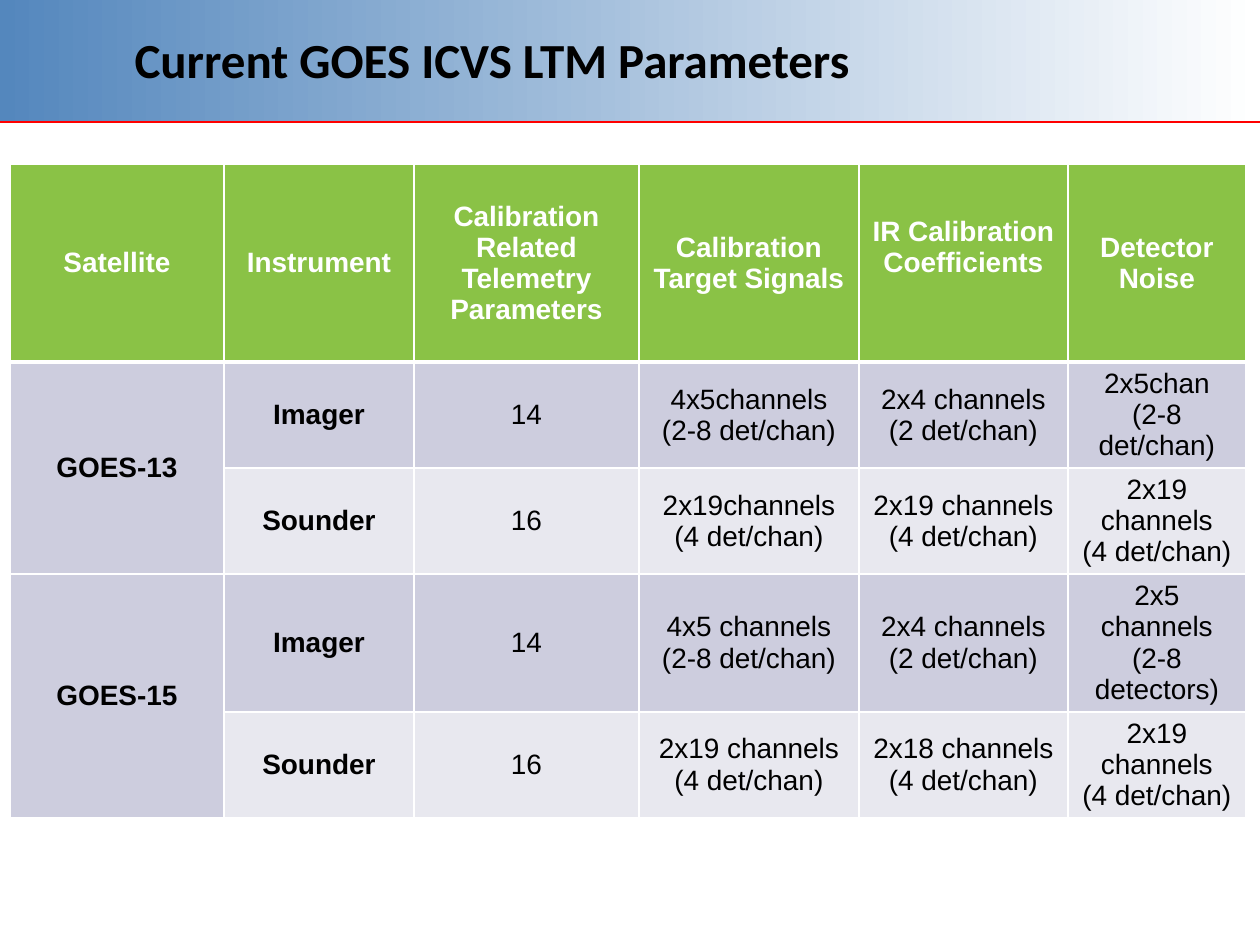
"""Build the slide of current GOES ICVS LTM parameters."""
from lxml.etree import SubElement
from pptx import Presentation
from pptx.dml.color import RGBColor as RGB
from pptx.enum.shapes import MSO_CONNECTOR as CONNECTOR, MSO_SHAPE as SHAPE
from pptx.enum.text import MSO_ANCHOR as ANCHOR, PP_ALIGN as ALIGN
from pptx.oxml import parse_xml
from pptx.oxml.ns import nsdecls, qn
from pptx.util import Emu, Pt

COLORS = {
    "blue": "5487BD", "white": "FFFFFF", "red": "FF0000", "black": "000000",
    "green": "8AC246", "lavender": "CDCDDE", "pale": "E8E8EF",
}
PX = 914400 / 126


def px(*lengths):
    return [Emu(round(length * PX)) for length in lengths]


def write(frame, text, font="Arial", size=16, color="black", bold=False, align=ALIGN.CENTER):
    frame.text = text
    frame.word_wrap = True
    for paragraph in frame.paragraphs:
        paragraph.alignment = align
        for run in paragraph.runs:
            run.font.name = font
            run.font.size = Pt(size)
            run.font.bold = bold
            run.font.color.rgb = RGB.from_string(COLORS[color])


prs = Presentation()
prs.slide_width, prs.slide_height = px(1260, 945)
slide = prs.slides.add_slide(prs.slide_layouts[5])
shapes = slide.shapes

band = shapes.add_shape(SHAPE.RECTANGLE, *px(0, -1, 1260, 122))
band.shadow.inherit = False
band.line.fill.background()
band.fill.gradient()
band.fill.gradient_angle = 0
for stop, shade, position in zip(band.fill.gradient_stops, ("blue", "white"), (0, 1)):
    stop.color.rgb = RGB.from_string(COLORS[shade])
    stop.position = position

rule = shapes.add_connector(CONNECTOR.STRAIGHT, *px(0, 122, 1260, 122))
rule.line.color.rgb = RGB.from_string(COLORS["red"])
rule.line.width = Pt(1.25)
SubElement(rule._element.spPr, qn("a:effectLst"))

title = shapes.title
title.left, title.top, title.width, title.height = px(122, 1, 1018, 116)
title.text_frame.vertical_anchor = ANCHOR.MIDDLE
write(title.text_frame, "Current GOES ICVS LTM Parameters", font="Calibri", size=28,
      bold=True, align=ALIGN.LEFT)
title._element.getparent().append(title._element)

parameters = [
    ["Satellite", "Instrument", "Calibration Related Telemetry Parameters",
     "Calibration Target Signals", "IR Calibration Coefficients", "Detector Noise"],
    ["GOES-13", "Imager", "14", "4x5channels (2-8 det/chan)",
     "2x4 channels\n(2 det/chan)", "2x5chan\n(2-8 det/chan)"],
    ["", "Sounder", "16", "2x19channels (4 det/chan)",
     "2x19 channels\n(4 det/chan)", "2x19 channels\n(4 det/chan)"],
    ["GOES-15", "Imager", "14", "4x5 channels (2-8 det/chan)",
     "2x4 channels\n(2 det/chan)", "2x5 channels\n(2-8 detectors)"],
    ["", "Sounder", "16", "2x19 channels\n(4 det/chan)",
     "2x18 channels\n(4 det/chan)", "2x19 channels\n(4 det/chan)"],
]
column_widths = px(214, 190, 225, 220, 209, 178)
row_heights = px(198, 105, 106, 138, 105)

table = shapes.add_table(len(row_heights), len(column_widths), *px(10, 164, 1236, 652)).table
for column, width in zip(table.columns, column_widths):
    column.width = width
for row, height in zip(table.rows, row_heights):
    row.height = height

for r, entries in enumerate(parameters):
    for c, entry in enumerate(entries):
        cell = table.cell(r, c)
        header = r == 0
        cell.vertical_anchor = ANCHOR.MIDDLE
        cell.fill.solid()
        fill = "green" if header else "lavender" if r % 2 or c == 0 else "pale"
        cell.fill.fore_color.rgb = RGB.from_string(COLORS[fill])
        write(cell.text_frame, entry, color="white" if header else "black",
              bold=header or c < 2)
        edges = {"L": 1, "R": 1, "T": 3 if r == 1 else 1, "B": 3 if header else 1}
        for place, (edge, points) in enumerate(edges.items()):
            cell._tc.get_or_add_tcPr().insert(place, parse_xml(
                f'<a:ln{edge} {nsdecls("a")} w="{Pt(points)}"><a:solidFill>'
                f'<a:srgbClr val="{COLORS["white"]}"/></a:solidFill></a:ln{edge}>'))

table.cell(0, 4).margin_bottom = px(37)[0]
for first in (1, 3):
    table.cell(first, 0).merge(table.cell(first + 1, 0))

prs.save("out.pptx")
